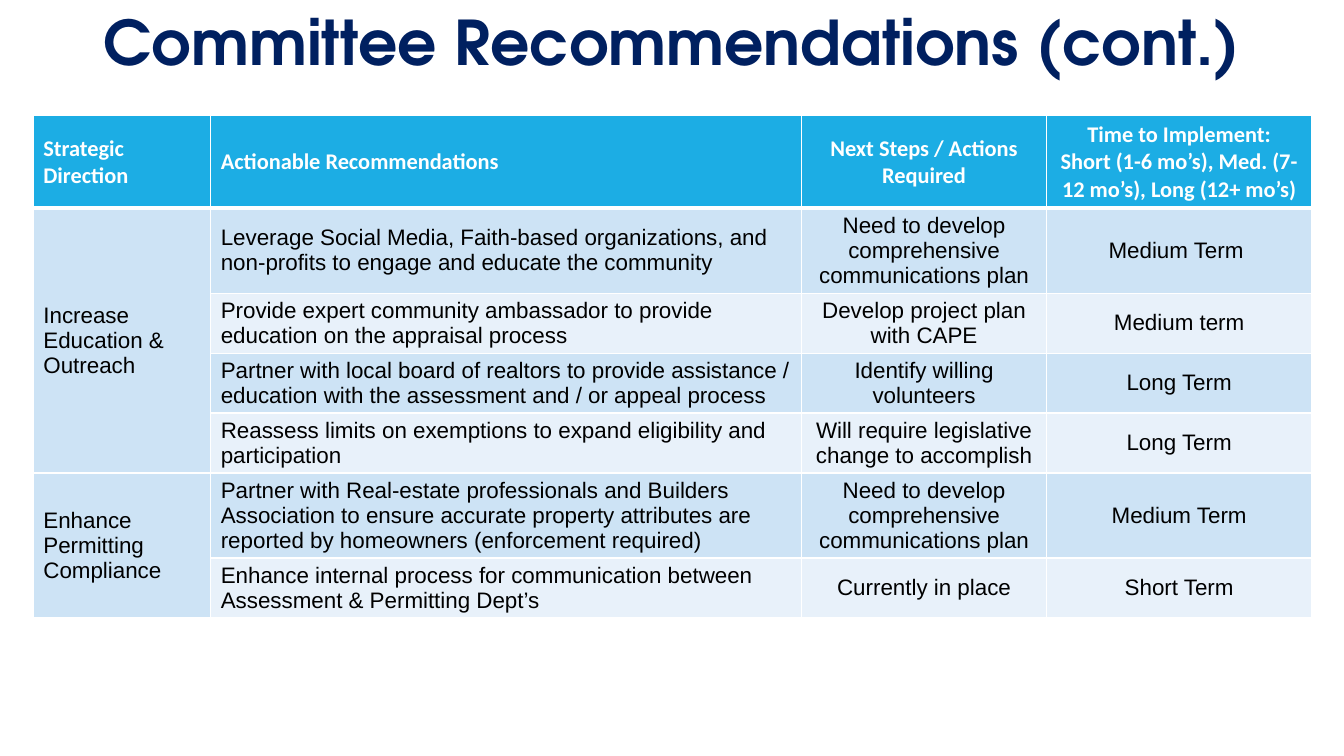
from dataclasses import dataclass

from lxml.etree import SubElement
from pptx import Presentation
from pptx.dml.color import RGBColor
from pptx.enum.text import MSO_ANCHOR, MSO_AUTO_SIZE, PP_ALIGN
from pptx.oxml.ns import qn
from pptx.util import Inches, Pt


@dataclass(frozen=True)
class Theme:
    navy: str = "002060"
    header_blue: str = "1CADE4"
    dark_band: str = "CDE3F5"
    light_band: str = "E8F1FA"
    white: str = "FFFFFF"
    black: str = "000000"
    title_font: str = "TeX Gyre Adventor"
    header_font: str = "Calibri"
    body_font: str = "Arial"
    title_size: int = 44
    table_size: int = 16
    thin_line: int = 1
    thick_line: int = 3


class SlideBuilder:
    """Places elements by percentages of the slide's width and height."""

    def __init__(self, presentation, theme):
        self.theme = theme
        self.width = presentation.slide_width
        self.height = presentation.slide_height
        self.slide = presentation.slides.add_slide(presentation.slide_layouts[5])

    def across(self, percent):
        return round(self.width * percent / 100)

    def down(self, percent):
        return round(self.height * percent / 100)

    def add_text(self, paragraph, text, font_name, size, color, bold, alignment):
        paragraph.alignment = alignment
        run = paragraph.add_run()
        run.text = text
        run.font.name = font_name
        run.font.size = Pt(size)
        run.font.bold = bold
        run.font.color.rgb = RGBColor.from_string(color)

    def title(self, text, left, top, width, height):
        shape = self.slide.shapes.title
        shape.left, shape.top = self.across(left), self.down(top)
        shape.width, shape.height = self.across(width), self.down(height)
        frame = shape.text_frame
        frame.auto_size = MSO_AUTO_SIZE.NONE
        frame.word_wrap = True
        frame.margin_left = frame.margin_right = 0
        frame.vertical_anchor = MSO_ANCHOR.MIDDLE
        paragraph = frame.paragraphs[0]
        paragraph.line_spacing = 0.9
        self.add_text(paragraph, text, self.theme.title_font, self.theme.title_size,
                      self.theme.navy, True, PP_ALIGN.CENTER)

    def borders(self, cell, top, bottom):
        properties = cell._tc.get_or_add_tcPr()
        thin = self.theme.thin_line
        for side, points in (("L", thin), ("R", thin), ("T", top), ("B", bottom)):
            line = SubElement(properties, qn(f"a:ln{side}"), w=str(int(Pt(points))))
            fill = SubElement(line, qn("a:solidFill"))
            SubElement(fill, qn("a:srgbClr"), val=self.theme.white)

    def cell(self, cell, text, row, column):
        theme = self.theme
        header = row == 0
        # White rules, heavier under the header
        self.borders(cell,
                     theme.thick_line if row == 1 else theme.thin_line,
                     theme.thick_line if header else theme.thin_line)
        # Header fill or alternating bands
        band = theme.dark_band if row % 2 or column == 0 else theme.light_band
        cell.fill.solid()
        cell.fill.fore_color.rgb = RGBColor.from_string(
            theme.header_blue if header else band)
        cell.vertical_anchor = MSO_ANCHOR.MIDDLE
        if not text:
            return
        frame = cell.text_frame
        for index, line in enumerate(text.split("\n")):
            paragraph = frame.add_paragraph() if index else frame.paragraphs[0]
            self.add_text(paragraph, line,
                          theme.header_font if header else theme.body_font,
                          theme.table_size,
                          theme.white if header else theme.black, header,
                          PP_ALIGN.CENTER if column >= 2 else PP_ALIGN.LEFT)

    def table(self, rows, left, top, column_widths, row_heights):
        table = self.slide.shapes.add_table(
            len(rows), len(column_widths), self.across(left), self.down(top),
            self.across(sum(column_widths)), self.down(sum(row_heights))).table
        table.horz_banding = False
        for column, width in zip(table.columns, column_widths):
            column.width = self.across(width)
        for row, height in zip(table.rows, row_heights):
            row.height = self.down(height)
        for row_index, texts in enumerate(rows):
            for column_index, text in enumerate(texts):
                self.cell(table.cell(row_index, column_index), text,
                          row_index, column_index)
        return table


HEADER = ("Strategic Direction", "Actionable Recommendations",
          "Next Steps / Actions Required",
          "Time to Implement:\nShort (1-6 mo’s), Med. (7-12 mo’s), Long (12+ mo’s)")

RECOMMENDATIONS = {
    "Increase Education & Outreach": [
        ("Leverage Social Media, Faith-based organizations, and non-profits "
         "to engage and educate the community",
         "Need to develop comprehensive communications plan", "Medium Term "),
        ("Provide expert community ambassador to provide education on the "
         "appraisal process",
         "Develop project plan with CAPE", "Medium term"),
        ("Partner with local board of realtors to provide assistance / "
         "education with the assessment and / or appeal process",
         "Identify willing volunteers", "Long Term"),
        ("Reassess limits on exemptions to expand eligibility and participation",
         "Will require legislative change to accomplish", "Long Term"),
    ],
    "Enhance Permitting Compliance": [
        ("Partner with Real-estate professionals and Builders Association to "
         "ensure accurate property attributes are reported by homeowners "
         "(enforcement required)",
         "Need to develop comprehensive communications plan", "Medium Term"),
        ("Enhance internal process for communication between Assessment & "
         "Permitting Dept’s",
         "Currently in place", "Short Term"),
    ],
}

HEADER_ROW, THREE_LINES, TWO_LINES = 12.13, 11.25, 7.93


def main():
    presentation = Presentation()
    presentation.slide_width = Inches(13.33)
    presentation.slide_height = Inches(7.5)
    builder = SlideBuilder(presentation, Theme())

    # Title
    builder.title("Committee Recommendations (cont.)", 6.9, 0.13, 86.27, 11.73)

    # Recommendations table
    rows = [HEADER]
    for direction, actions in RECOMMENDATIONS.items():
        for index, action in enumerate(actions):
            rows.append(("" if index else direction, *action))
    table = builder.table(
        rows, left=2.48, top=15.33,
        column_widths=(13.2, 43.96, 18.23, 19.73),
        row_heights=(HEADER_ROW, THREE_LINES, TWO_LINES, TWO_LINES, TWO_LINES,
                     THREE_LINES, TWO_LINES))

    # One merged cell per strategic direction
    first = 1
    for actions in RECOMMENDATIONS.values():
        last = first + len(actions) - 1
        table.cell(first, 0).merge(table.cell(last, 0))
        first = last + 1

    presentation.save("out.pptx")


if __name__ == "__main__":
    main()
